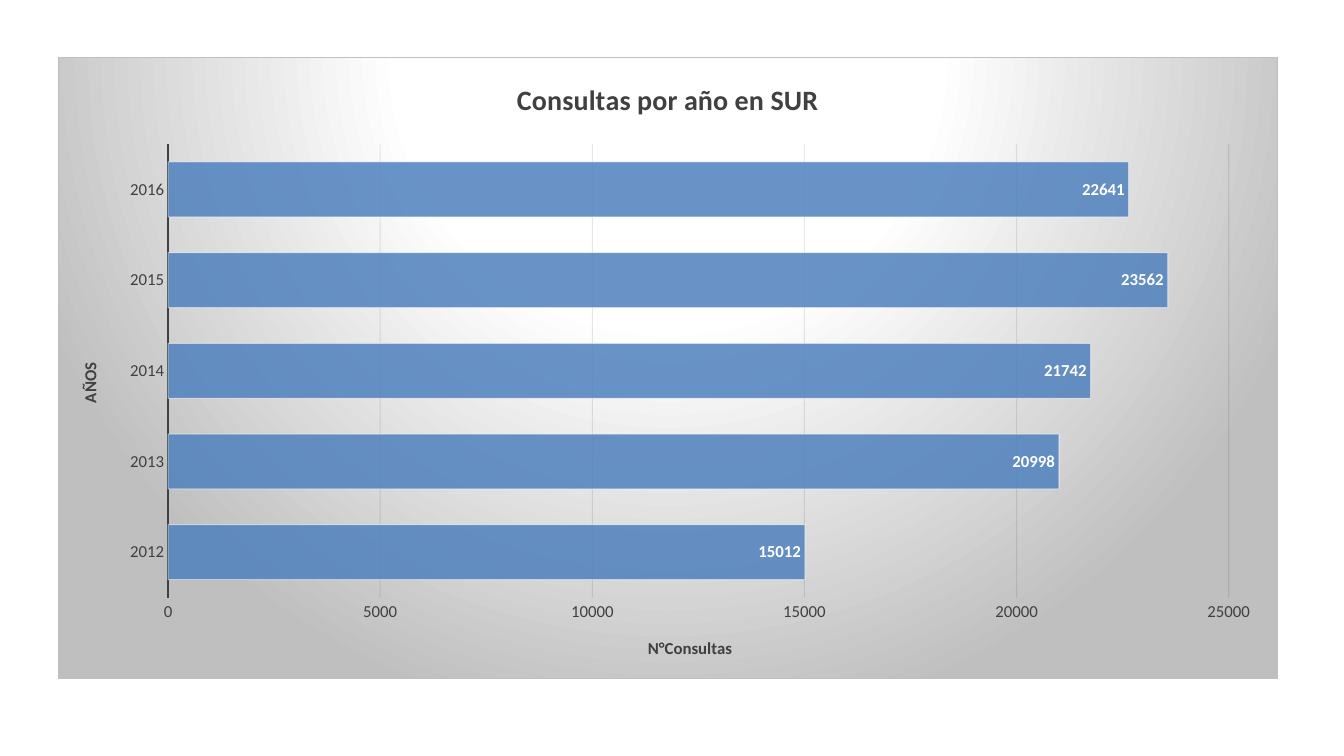
from lxml.etree import SubElement
from pptx import Presentation
from pptx.chart.data import CategoryChartData
from pptx.dml.color import RGBColor
from pptx.enum.chart import XL_CHART_TYPE, XL_LABEL_POSITION, XL_TICK_MARK
from pptx.oxml import parse_xml
from pptx.oxml.ns import nsdecls, qn
from pptx.util import Inches, Pt

COLORS = {
    "text": "404040",
    "bar": "4F81BD",
    "grid": "0D0D0D",
    "white": "FFFFFF",
    "edge": "BFBFBF",
}
VISITS = {"2012": 15012, "2013": 20998, "2014": 21742, "2015": 23562, "2016": 22641}
PLOT = {"x": 0.09, "y": 0.14, "w": 0.87, "h": 0.73}


def tint(name):
    return RGBColor.from_string(COLORS[name])


def style(font, size, color="text", bold=False):
    font.name = "Calibri"
    font.size = Pt(size)
    font.bold = bold
    font.color.rgb = tint(color)


def stroke(line, color, width=0.75):
    line.color.rgb = tint(color)
    line.width = Pt(width)


def fade(owner, *shares):
    for node, share in zip(owner.xpath("c:spPr//a:srgbClr"), shares):
        SubElement(node, qn("a:alpha"), val=str(share * 1000))


def set_title(owner, text, size):
    owner.has_title = True
    frame = owner.chart_title if hasattr(owner, "chart_title") else owner.axis_title
    par = frame.text_frame.paragraphs[0]
    par.text = text
    style(par.font, size, bold=True)


def set_axis(axis, text):
    set_title(axis, text, 12)
    axis.major_tick_mark = axis.minor_tick_mark = XL_TICK_MARK.NONE
    style(axis.tick_labels.font, 12)


def set_area(chart):
    stops = "".join(
        f'<a:gs pos="{pos * 1000}"><a:srgbClr val="{COLORS[name]}"/></a:gs>'
        for pos, name in ((0, "white"), (39, "white"), (100, "edge"))
    )
    area = parse_xml(
        f'<c:spPr {nsdecls("c", "a")}><a:gradFill><a:gsLst>{stops}</a:gsLst>'
        '<a:path path="circle"><a:fillToRect l="50000" t="-80000" r="50000" b="180000"/>'
        f'</a:path></a:gradFill><a:ln w="{Pt(0.75)}"><a:solidFill>'
        f'<a:srgbClr val="{COLORS["edge"]}"/></a:solidFill></a:ln></c:spPr>'
    )
    chart.element.find(qn("c:chart")).addnext(area)


def set_plot(chart):
    area = chart.element.find(qn("c:chart")).find(qn("c:plotArea"))
    for old in area.findall(qn("c:layout")):
        area.remove(old)
    modes = '<c:layoutTarget val="inner"/><c:xMode val="edge"/><c:yMode val="edge"/>'
    sides = "".join(f'<c:{key} val="{val}"/>' for key, val in PLOT.items())
    area.insert(0, parse_xml(
        f'<c:layout {nsdecls("c")}><c:manualLayout>{modes}{sides}</c:manualLayout></c:layout>'
    ))


def set_bars(plot):
    plot.gap_width = 65
    plot.vary_by_categories = False
    bars = plot.series[0]
    bars.format.fill.solid()
    bars.format.fill.fore_color.rgb = tint("bar")
    stroke(bars.format.line, "white")
    fade(bars.format.fill and bars._element, 85, 50)
    labels = bars.data_labels
    labels.show_value = True
    labels.position = XL_LABEL_POSITION.INSIDE_END
    style(labels.font, 12, "white", True)


def add_bars(slide, wide, high):
    data = CategoryChartData()
    data.categories = list(VISITS)
    data.add_series("Series 1", VISITS.values())
    chart = slide.shapes.add_chart(
        XL_CHART_TYPE.BAR_CLUSTERED,
        int(wide * 0.043), int(high * 0.075), int(wide * 0.908), int(high * 0.823), data,
    ).chart
    chart.has_legend = False
    style(chart.font, 10)
    set_title(chart, "Consultas por año en SUR", 20)
    years, count = chart.category_axis, chart.value_axis
    set_axis(years, "AÑOS")
    stroke(years.format.line, "text", 1.5)
    set_axis(count, "N°Consultas")
    count.minimum_scale, count.maximum_scale, count.major_unit = 0, 25000, 5000
    count.format.line.fill.background()
    grid = count.major_gridlines
    stroke(grid.format.line, "grid")
    fade(count._element.find(qn("c:majorGridlines")), 10)
    set_bars(chart.plots[0])
    set_plot(chart)
    set_area(chart)


def main():
    deck = Presentation()
    deck.slide_width, deck.slide_height = Inches(13.33), Inches(7.5)
    slide = deck.slides.add_slide(deck.slide_layouts[6])
    add_bars(slide, deck.slide_width, deck.slide_height)
    deck.save("out.pptx")


if __name__ == "__main__":
    main()
